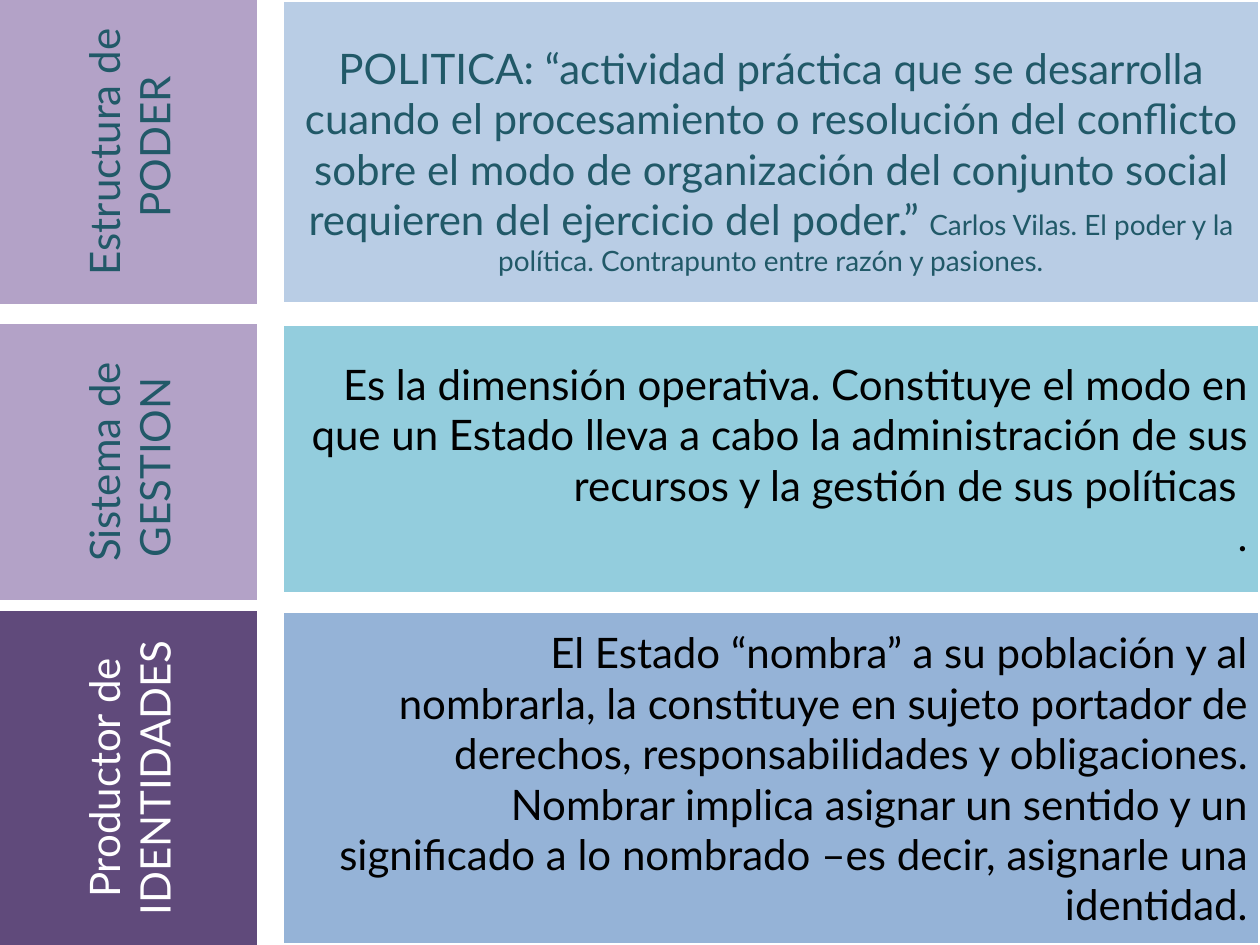
from dataclasses import dataclass

from pptx import Presentation, util as u
from pptx.dml.color import RGBColor
from pptx.enum import shapes, text

PX = 914400 / 126
SLIDE_W, SLIDE_H = 1260, 945
LABEL_W = 257
PANEL_X, PANEL_W = 282, 978
INSET_Y = 6
FONT, SIZE, CITATION_SIZE = "Lato", 24, 16
TEAL, WHITE, BLACK = "215968", "FFFFFF", "000000"
CENTER, RIGHT = text.PP_ALIGN.CENTER, text.PP_ALIGN.RIGHT


@dataclass
class Dimension:
    """One row: a sideways label and the panel that explains it."""
    top: int
    label_h: int
    panel_h: int
    label: str
    label_fill: str
    label_color: str
    body: str
    panel_fill: str
    body_color: str
    align: text.PP_ALIGN
    citation: str = ""
    text_drop: int = 0


DIMENSIONS = [
    Dimension(
        0, 304, 304, "Estructura de\n PODER", "B3A2C7", TEAL,
        "POLITICA: “actividad práctica que se desarrolla cuando el procesamiento "
        "o resolución del conflicto sobre el modo de organización del conjunto "
        "social requieren del ejercicio del poder.” ",
        "B9CDE5", TEAL, CENTER,
        citation="Carlos Vilas. El poder y la política. Contrapunto entre razón y pasiones.",
        text_drop=8),
    Dimension(
        324, 276, 270, "Sistema de GESTION ", "B3A2C7", TEAL,
        "Es la dimensión operativa. Constituye el modo en que un Estado lleva a cabo "
        "la administración de sus recursos y la gestión de sus políticas \n.",
        "93CDDD", BLACK, RIGHT),
    Dimension(
        611, 334, 334, "Productor de IDENTIDADES", "604A7B", WHITE,
        "El Estado “nombra” a su población y al\n"
        "nombrarla, la constituye en sujeto portador de derechos, responsabilidades "
        "y obligaciones.\n"
        "Nombrar implica asignar un sentido y un\n"
        "significado a lo nombrado –es decir, asignarle una identidad.",
        "95B3D7", BLACK, RIGHT),
]


def px(length: float) -> u.Emu:
    return u.Emu(round(length * PX))


def rgb(value: str) -> RGBColor:
    return RGBColor.from_string(value)


def add_block(slide, x: float, y: float, w: int, h: int, fill: str):
    block = slide.shapes.add_shape(
        shapes.MSO_SHAPE.RECTANGLE, px(x), px(y), px(w), px(h))
    block.shadow.inherit = False
    block.fill.solid()
    block.fill.fore_color.rgb = rgb(fill)
    block.line.fill.background()
    return block


def write(block, words: str, color: str, align: text.PP_ALIGN, citation: str = "") -> None:
    frame = block.text_frame
    frame.text = words
    frame.word_wrap = True
    frame.vertical_anchor = text.MSO_ANCHOR.MIDDLE
    if citation:
        frame.paragraphs[-1].add_run().text = citation
    for paragraph in frame.paragraphs:
        paragraph.alignment = align
        for run in paragraph.runs:
            run.font.name = FONT
            run.font.size = u.Pt(CITATION_SIZE if run.text == citation else SIZE)
            run.font.color.rgb = rgb(color)


def add_label(slide, row: Dimension) -> None:
    """Place the label so that it fills its column after a quarter turn."""
    shift = (LABEL_W - row.label_h) / 2
    label = add_block(slide, shift, row.top - shift, row.label_h, LABEL_W, row.label_fill)
    label.rotation = 270
    write(label, row.label, row.label_color, CENTER)


def add_panel(slide, row: Dimension) -> None:
    panel = add_block(slide, PANEL_X, row.top, PANEL_W, row.panel_h, row.panel_fill)
    panel.line.color.rgb = rgb(WHITE)
    panel.line.width = u.Pt(2)
    panel.text_frame.margin_top = px(INSET_Y + 2 * row.text_drop)
    panel.text_frame.margin_bottom = px(INSET_Y)
    write(panel, row.body, row.body_color, row.align, row.citation)


def main() -> None:
    deck = Presentation()
    deck.slide_width, deck.slide_height = px(SLIDE_W), px(SLIDE_H)
    slide = deck.slides.add_slide(deck.slide_layouts[6])
    for row in DIMENSIONS:
        add_panel(slide, row)
        add_label(slide, row)
    deck.save("out.pptx")


if __name__ == "__main__":
    main()
